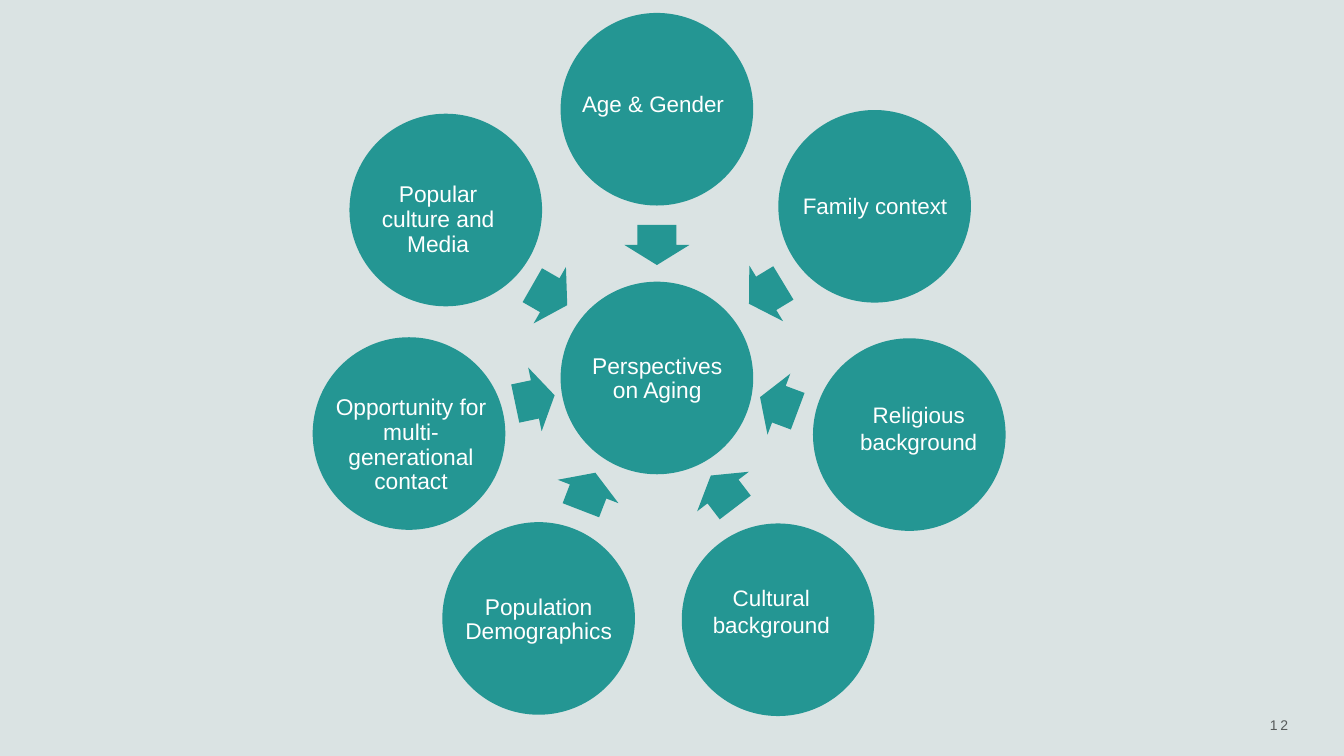
import pptx
import pptx.util
import pptx.dml.color
import pptx.enum.shapes
import pptx.enum.text

Cm = pptx.util.Cm
Pt = pptx.util.Pt
Shape = pptx.enum.shapes.MSO_SHAPE
Align = pptx.enum.text.PP_ALIGN

BACKGROUND = "DAE3E3"
TEAL = "249693"
WHITE = "FFFFFF"
GREY = "575B5B"
FONT = "Arial"
CIRCLE_SIZE = 7.28
ARROW_LENGTH, ARROW_WIDTH = 1.52, 2.46
LARGE = (24.4, 26.4)
MEDIUM = (24, 29.3)
LOOSE = (24, 33)
SMALL = (15, 18)

TOPICS = [
    (["Perspectives on Aging"], (24.83, 14.29), (22.02, 13.39, 5.64, 1.85), LARGE, None),
    (["Age & Gender"], (24.83, 4.13), (20.85, 3.25, 7.67, 1.07), LOOSE, (24.83, 9.26, 90)),
    (["Family context"], (33.06, 7.8), (29.67, 7.24, 6.81, 0.97), MEDIUM, (28.96, 11.09, 148.8)),
    (["Religious", "background"], (34.37, 16.43), (31.88, 15.14, 5.69, 2.01), MEDIUM, (29.44, 15.28, 200.5)),
    (["Cultural background"], (29.41, 23.43), (26.31, 22.05, 5.69, 2.06), MEDIUM, (27.33, 18.58, 232.6)),
    (["Population Demographics"], (20.36, 23.38), (17.25, 22.5, 6.22, 1.88), LARGE, (22.23, 18.58, 291.1)),
    (["Opportunity for multi-generational contact"], (15.46, 16.39), (12.55, 14.96, 5.97, 3.68), LARGE,
     (20.22, 15.1, 348.1)),
    (["Popular culture and Media"], (16.85, 7.94), (14.02, 6.91, 5.08, 2.77), LARGE, (20.78, 11.16, 29.8)),
]
PAGE_NUMBER = "12"
PAGE_NUMBER_BOX = (41.86, 27.08, 6.83, 0.69)
PAGE_NUMBER_SPACING = 290


def color(value):
    return pptx.dml.color.RGBColor.from_string(value)


def add_centred_shape(slide, kind, x, y, width, height):
    shape = slide.shapes.add_shape(kind, Cm(x - width / 2), Cm(y - height / 2), Cm(width), Cm(height))
    shape.shadow.inherit = False
    shape.fill.solid()
    shape.fill.fore_color.rgb = color(TEAL)
    shape.line.fill.background()
    return shape


def add_arrow(slide, x, y, angle):
    arrow = add_centred_shape(slide, Shape.RIGHT_ARROW, x, y, ARROW_LENGTH, ARROW_WIDTH)
    arrow.adjustments[0] = 0.6
    arrow.adjustments[1] = 0.5
    arrow.rotation = angle


def add_text(slide, lines, box, style, text_color, alignment, letter_spacing=0):
    size, line_spacing = style
    frame = slide.shapes.add_textbox(*map(Cm, box)).text_frame
    frame.word_wrap = True
    frame.margin_left = frame.margin_right = frame.margin_top = frame.margin_bottom = 0
    for index, line in enumerate(lines):
        paragraph = frame.add_paragraph() if index else frame.paragraphs[0]
        paragraph.alignment = alignment
        paragraph.line_spacing = Pt(line_spacing)
        run = paragraph.add_run()
        run.text = line
        run.font.name = FONT
        run.font.size = Pt(size)
        run.font.color.rgb = color(text_color)
        if letter_spacing:
            run._r.get_or_add_rPr().set("spc", str(letter_spacing))


def main():
    presentation = pptx.Presentation()
    presentation.slide_width = Cm(50.8)
    presentation.slide_height = Cm(28.58)
    slide = presentation.slides.add_slide(presentation.slide_layouts[6])
    slide.background.fill.solid()
    slide.background.fill.fore_color.rgb = color(BACKGROUND)

    for lines, centre, box, style, arrow in TOPICS:
        add_centred_shape(slide, Shape.OVAL, *centre, CIRCLE_SIZE, CIRCLE_SIZE)
        add_text(slide, lines, box, style, WHITE, Align.CENTER)
        if arrow:
            add_arrow(slide, *arrow)
    add_text(slide, [PAGE_NUMBER], PAGE_NUMBER_BOX, SMALL, GREY, Align.RIGHT, PAGE_NUMBER_SPACING)
    presentation.save("out.pptx")


if __name__ == "__main__":
    main()
